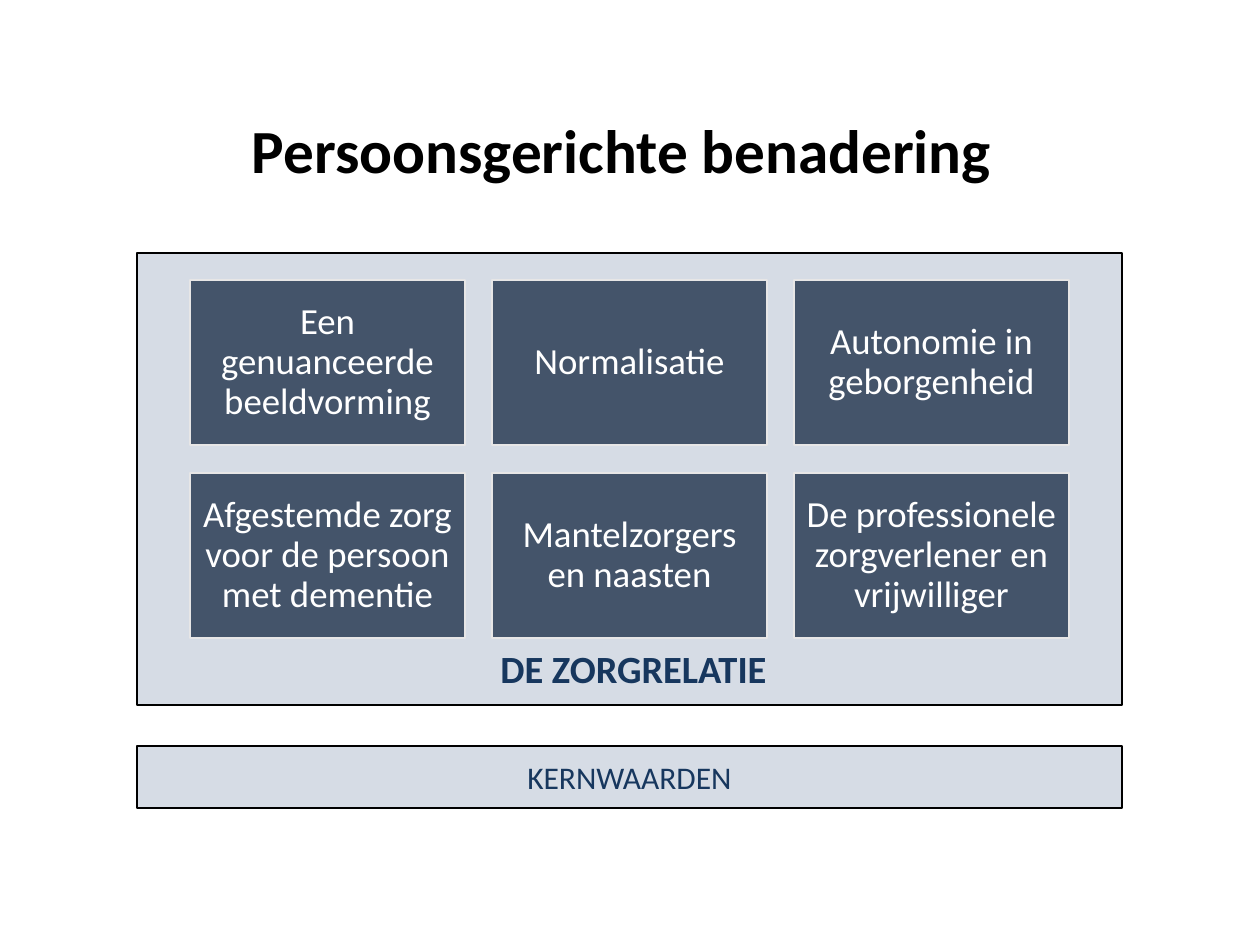
from dataclasses import dataclass
from typing import Optional

from pptx import Presentation
from pptx.dml.color import RGBColor as RGB
from pptx.enum.shapes import MSO_SHAPE as Shape
from pptx.enum.text import MSO_ANCHOR as Anchor, MSO_AUTO_SIZE as AutoSize, PP_ALIGN as Align
from pptx.util import Emu, Pt

PX_PER_INCH = 126


@dataclass(frozen=True)
class Theme:
    font: str = "Calibri"
    black: RGB = RGB(0x00, 0x00, 0x00)
    white: RGB = RGB(0xFF, 0xFF, 0xFF)
    navy: RGB = RGB(0x17, 0x37, 0x5E)
    panel: RGB = RGB(0xD6, 0xDC, 0xE5)
    card: RGB = RGB(0x44, 0x54, 0x6A)
    card_line: RGB = RGB(0xE7, 0xE6, 0xE6)
    title_size: int = 35
    caption_size: int = 22
    card_size: int = 21
    values_size: int = 18


@dataclass(frozen=True)
class Box:
    left: int
    top: int
    width: int
    height: int


@dataclass(frozen=True)
class Style:
    size: int
    color: RGB
    bold: bool = False
    align: Align = Align.CENTER
    spacing: Optional[float] = None


THEME = Theme()
TITLE = Style(THEME.title_size, THEME.black, bold=True, align=Align.LEFT)
CAPTION = Style(THEME.caption_size, THEME.navy, bold=True, align=Align.LEFT)
CARD = Style(THEME.card_size, THEME.white, spacing=0.9)
VALUES = Style(THEME.values_size, THEME.navy)

FIRST_CARD = Box(190, 280, 275, 165)
COLUMN_STEP, ROW_STEP = 302, 193
CARD_INSET = 11
CARDS = [
    ["Een genuanceerde beeldvorming", "Normalisatie", "Autonomie in geborgenheid"],
    ["Afgestemde zorg voor de persoon met dementie", "Mantelzorgers en naasten",
     "De professionele zorgverlener en vrijwilliger"],
]


def px(n: int) -> Emu:
    return Emu(round(n * 914400 / PX_PER_INCH))


def place(box: Box) -> tuple:
    return px(box.left), px(box.top), px(box.width), px(box.height)


def write(sp, text: str, style: Style, anchor=Anchor.MIDDLE) -> None:
    tf = sp.text_frame
    tf.word_wrap = True
    tf.auto_size = AutoSize.NONE
    tf.vertical_anchor = anchor
    tf.text = text
    p = tf.paragraphs[0]
    p.alignment = style.align
    if style.spacing:
        p.line_spacing = style.spacing
    font = p.runs[0].font
    font.name, font.size, font.bold = THEME.font, Pt(style.size), style.bold
    font.color.rgb = style.color


def add_rect(s, box: Box, fill: RGB, line: RGB):
    sp = s.shapes.add_shape(Shape.RECTANGLE, *place(box))
    sp.shadow.inherit = False
    sp.fill.solid()
    sp.fill.fore_color.rgb = fill
    sp.line.color.rgb = line
    sp.line.width = Pt(1)
    return sp


def add_cards(s) -> None:
    for row, labels in enumerate(CARDS):
        for col, label in enumerate(labels):
            box = Box(FIRST_CARD.left + col * COLUMN_STEP, FIRST_CARD.top + row * ROW_STEP,
                      FIRST_CARD.width, FIRST_CARD.height)
            sp = add_rect(s, box, THEME.card, THEME.card_line)
            tf = sp.text_frame
            tf.margin_left = tf.margin_right = px(CARD_INSET)
            tf.margin_top = tf.margin_bottom = px(CARD_INSET)
            write(sp, label, CARD)


def main() -> None:
    prs = Presentation()
    prs.slide_width, prs.slide_height = px(1260), px(945)
    s = prs.slides.add_slide(prs.slide_layouts[5])

    title = s.shapes.title
    title.left, title.top, title.width, title.height = place(Box(239, 106, 780, 87))
    write(title, "Persoonsgerichte benadering", TITLE, Anchor.TOP)

    values = add_rect(s, Box(137, 746, 985, 62), THEME.panel, THEME.black)
    write(values, "KERNWAARDEN", VALUES)

    add_rect(s, Box(137, 253, 985, 452), THEME.panel, THEME.black)
    add_cards(s)
    caption = s.shapes.add_textbox(*place(Box(488, 639, 401, 59)))
    write(caption, "DE ZORGRELATIE", CAPTION, Anchor.TOP)

    prs.save("out.pptx")


if __name__ == "__main__":
    main()
